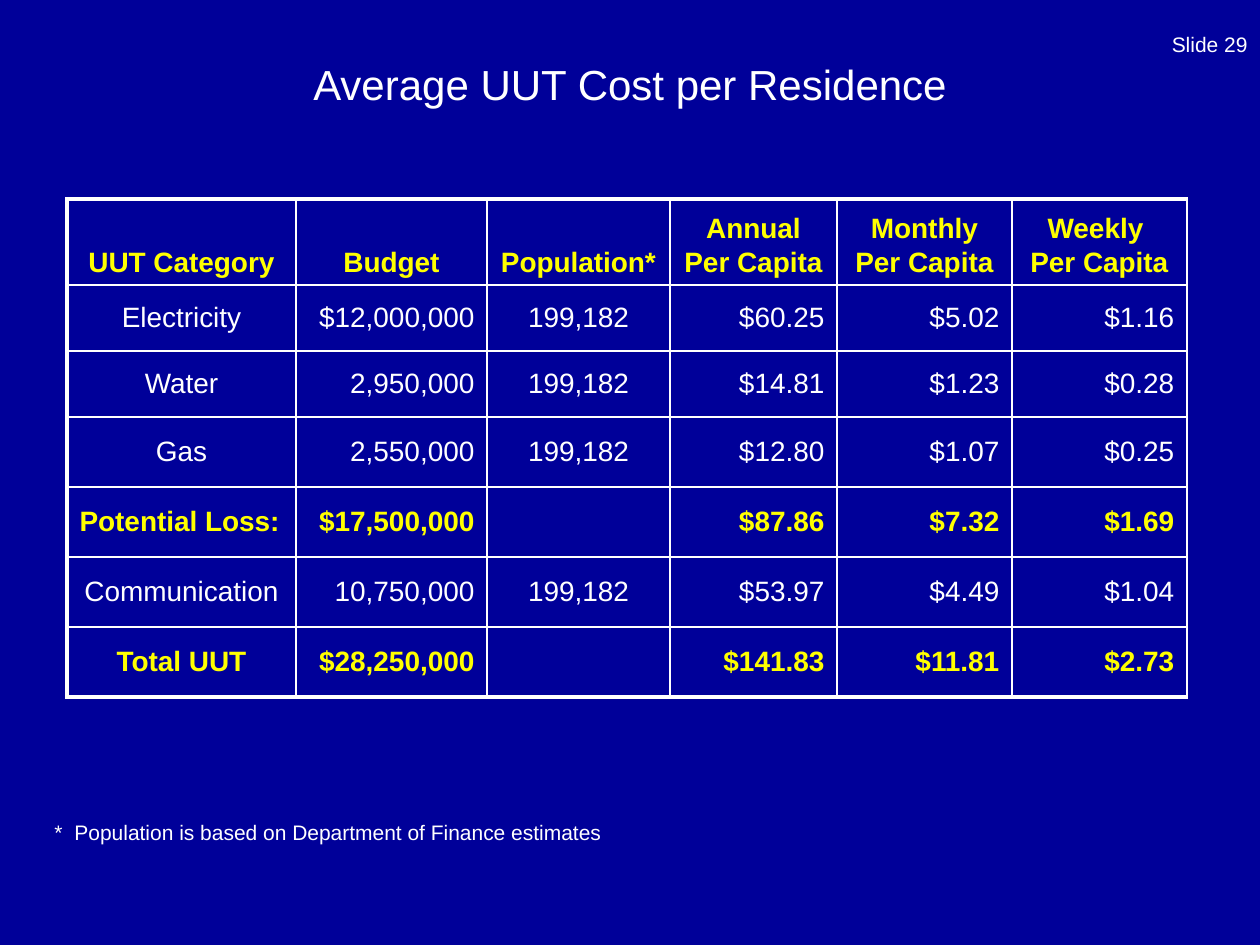
import pptx
import pptx.util
import pptx.dml.color
import pptx.enum.text
import pptx.oxml
import pptx.oxml.ns
from lxml import etree

SCALE = 914400 / 126
FONT = "Arial"
COLORS = {"back": "000099", "text": "FFFFFF", "key": "FFFF00"}
ALIGN = pptx.enum.text.PP_ALIGN
ANCHOR = pptx.enum.text.MSO_ANCHOR

TITLE = "Average UUT Cost per Residence"
NUMBER = "Slide 29"
NOTE = "*\tPopulation is based on Department of Finance estimates"
HEAD = ["UUT Category", "Budget", "Population*", "Annual\nPer Capita",
        "Monthly\nPer Capita", "Weekly \nPer Capita"]
PEOPLE = "199,182"
BODY = [
    ["Electricity", "$12,000,000", PEOPLE, "$60.25", "$5.02", "$1.16"],
    ["Water", "2,950,000", PEOPLE, "$14.81", "$1.23", "$0.28"],
    ["Gas", "2,550,000", PEOPLE, "$12.80", "$1.07", "$0.25"],
    ["Potential Loss:", "$17,500,000", "", "$87.86", "$7.32", "$1.69"],
    ["Communication", "10,750,000", PEOPLE, "$53.97", "$4.49", "$1.04"],
    ["Total UUT", "$28,250,000", "", "$141.83", "$11.81", "$2.73"],
]
ROWS = [HEAD] + BODY
SUMS = ("Potential Loss:", "Total UUT")
WIDTHS = [229, 191, 183, 167, 175, 175]
HEIGHTS = [86, 66, 66, 70, 70, 70, 70]


def px(n):
    return pptx.util.Emu(round(n * SCALE))


def rgb(name):
    return pptx.dml.color.RGBColor.from_string(COLORS[name])


def style(frame, size, align, color="text", bold=False):
    for i, para in enumerate(frame.paragraphs):
        para.alignment = align
        if i:
            para.space_before = pptx.util.Pt(2)
        for run in para.runs:
            font = run.font
            font.name, font.size, font.bold = FONT, pptx.util.Pt(size), bold
            font.color.rgb = rgb(color)


def place(shape, box):
    shape.left, shape.top, shape.width, shape.height = map(px, box)


def add_text(slide, text, box, anchor, align):
    shape = slide.shapes.add_textbox(*map(px, box))
    frame = shape.text_frame
    frame.word_wrap = True
    frame.vertical_anchor = anchor
    frame.text = text
    style(frame, 12, align)
    return frame


def add_lines(cell, widths):
    """Border a cell; widths are points for left, right, top, bottom."""
    props = cell._tc.get_or_add_tcPr()
    for i, (side, width) in enumerate(zip("LRTB", widths)):
        line = pptx.oxml.parse_xml(
            f'<a:ln{side} {pptx.oxml.ns.nsdecls("a")} w="{pptx.util.Pt(width)}">'
            f'<a:solidFill><a:srgbClr val="{COLORS["text"]}"/></a:solidFill>'
            f'</a:ln{side}>')
        props.insert(i, line)


def fill_cell(cell, text, row, col):
    head = row == 0
    key = head or ROWS[row][0] in SUMS
    if head or col in (0, 2):
        align = ALIGN.CENTER
    else:
        align = ALIGN.RIGHT
    if text == "Potential Loss:":
        align = ALIGN.LEFT
    cell.text_frame.text = text
    cell.vertical_anchor = ANCHOR.BOTTOM if head else ANCHOR.MIDDLE
    style(cell.text_frame, 16, align, "key" if key else "text", key)
    cell.fill.background()
    last = row == len(ROWS) - 1
    add_lines(cell, [1 if col else 2.25, 1, 2.25 if head else 1, 2.25 if last else 1])


def add_grid(slide):
    frame = slide.shapes.add_table(len(ROWS), len(WIDTHS), px(67), px(199),
                                   px(sum(WIDTHS)), px(sum(HEIGHTS)))
    table = frame.table
    table.horz_banding = False
    for col, width in zip(table.columns, WIDTHS):
        col.width = px(width)
    for r, (row, height) in enumerate(zip(ROWS, HEIGHTS)):
        table.rows[r].height = px(height)
        for c, text in enumerate(row):
            fill_cell(table.cell(r, c), text, r, c)


def main():
    deck = pptx.Presentation()
    deck.slide_width, deck.slide_height = px(1260), px(945)
    slide = deck.slides.add_slide(deck.slide_layouts[5])
    back = slide.background.fill
    back.solid()
    back.fore_color.rgb = rgb("back")

    title = slide.shapes.title
    place(title, (63, 21, 1134, 126))
    title.text_frame.text = TITLE
    title.text_frame.vertical_anchor = ANCHOR.MIDDLE
    style(title.text_frame, 24, ALIGN.CENTER)

    add_text(slide, NUMBER, (966, 0, 294, 63), ANCHOR.BOTTOM, ALIGN.RIGHT)
    add_grid(slide)
    note = add_text(slide, NOTE, (42, 813, 1155, 38), ANCHOR.TOP, ALIGN.LEFT)
    props = note.paragraphs[0]._p.get_or_add_pPr()
    tabs = etree.SubElement(props, pptx.oxml.ns.qn("a:tabLst"))
    etree.SubElement(tabs, pptx.oxml.ns.qn("a:tab"), pos=str(px(20)), algn="l")

    deck.save("out.pptx")


if __name__ == "__main__":
    main()
